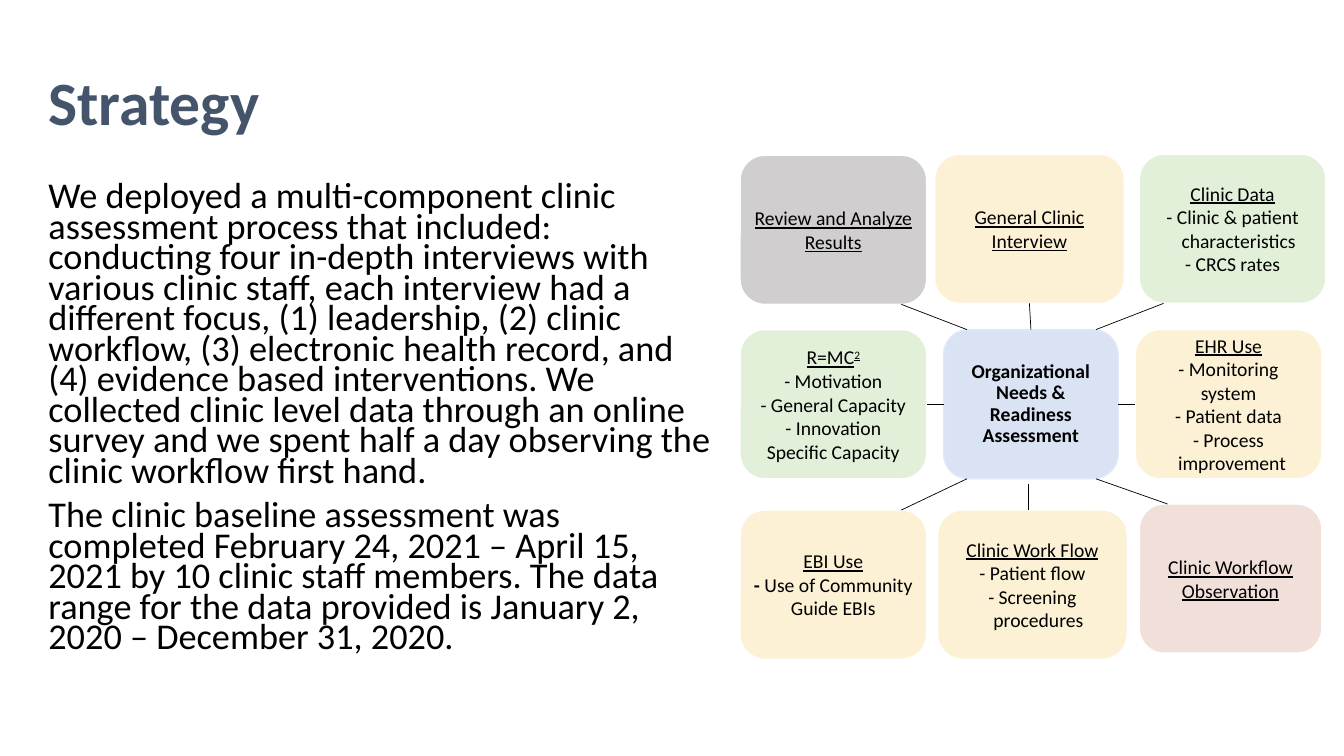
"""Build the Strategy slide with its clinic assessment diagram."""
from lxml.etree import SubElement
from pptx import Presentation
from pptx.dml.color import RGBColor
from pptx.enum.shapes import MSO_CONNECTOR, MSO_SHAPE
from pptx.enum.text import MSO_ANCHOR, MSO_AUTO_SIZE, PP_ALIGN
from pptx.oxml.ns import qn
from pptx.util import Inches, Pt


def color(code):
    return RGBColor.from_string(code)


def write(para, text, code="000000", **extra):
    run = para.add_run()
    run.text = text
    look = {"name": "Calibri", "size": Pt(14), "bold": False, "underline": False}
    for key, value in {**look, **extra}.items():
        setattr(run.font, key, value)
    run.font.color.rgb = color(code)
    return run


deck = Presentation()
deck.slide_width = Inches(13.33)
deck.slide_height = Inches(7.5)
slide = deck.slides.add_slide(deck.slide_layouts[1])
shapes = slide.shapes

title, body = slide.placeholders
places = [
    (title, (0.38, 0.32, 11.5, 1.45), MSO_ANCHOR.MIDDLE),
    (body, (0.38, 1.78, 6.78, 5.01), MSO_ANCHOR.TOP),
]
for holder, place, anchor in places:
    for key, value in zip(("left", "top", "width", "height"), place):
        setattr(holder, key, Inches(value))
    frame = {"word_wrap": True, "auto_size": MSO_AUTO_SIZE.NONE, "vertical_anchor": anchor}
    for key, value in frame.items():
        setattr(holder.text_frame, key, value)

para = title.text_frame.paragraphs[0]
para.alignment = PP_ALIGN.LEFT
para.line_spacing = 0.9
write(para, "Strategy", "44546A", size=Pt(44), bold=True)

story = [
    "We deployed a multi-component clinic assessment process that included: "
    "conducting four in-depth interviews with various clinic staff, each interview "
    "had a different focus, (1) leadership, (2) clinic workflow, (3) electronic "
    "health record, and (4) evidence based interventions. We collected clinic level "
    "data through an online survey and we spent half a day observing the clinic "
    "workflow first hand.",
    "The clinic baseline assessment was completed February 24, 2021 – April 15, 2021 "
    "by 10 clinic staff members. The data range for the data provided is January 2, "
    "2020 – December 31, 2020.",
]
for index, text in enumerate(story):
    para = body.text_frame.add_paragraph() if index else body.text_frame.paragraphs[0]
    for key, value in {"line_spacing": 0.7, "space_before": Pt(10)}.items():
        setattr(para, key, value)
    write(para, text, size=Pt(25.9))
    props = para._p.get_or_add_pPr()
    props.set("marL", "0")
    props.set("indent", "0")
    SubElement(props, qn("a:buNone"))

cream, green = "FCF1D4", "E2F0D9"
cards = [
    ("ehr", 11.26, 3.27, 1.85, cream, "EHR Use",
     [("- Monitoring system", 0), ("- Patient data", 0), ("- Process improvement", 0.07)]),
    ("core", 9.36, 3.27, 1.73, "DAE3F3", "Organizational Needs & Readiness Assessment", []),
    ("talk", 9.27, 1.53, 1.88, cream, "General Clinic Interview", []),
    ("data", 11.3, 1.53, 1.85, green, "Clinic Data",
     [("- Clinic & patient characteristics", 0.12), ("- CRCS rates", 0)]),
    ("watch", 11.3, 5, 1.81, "F1E0DA", "Clinic Workflow Observation", []),
    ("flow", 9.3, 5.06, 1.88, cream, "Clinic Work Flow",
     [("- Patient flow", 0), ("- Screening procedures", 0.12)]),
    ("ebi", 7.34, 5.06, 1.85, cream, "EBI Use", [("- Use of Community Guide EBIs", 0)]),
    ("ready", 7.34, 3.27, 1.85, green, "R=MC",
     [("- Motivation", 0), ("- General Capacity", 0), ("- Innovation Specific Capacity", 0)]),
    ("review", 7.34, 1.54, 1.85, "D0CECE", "Review and Analyze Results", []),
]
boxes = {}
for name, left, top, width, fill, head, items in cards:
    core = name == "core"
    box = shapes.add_shape(MSO_SHAPE.ROUNDED_RECTANGLE, Inches(left), Inches(top),
                           Inches(width), Inches(1.48))
    boxes[name] = box
    box.shadow.inherit = False
    box.fill.solid()
    box.fill.fore_color.rgb = color(fill)
    box.line.color.rgb = color("DEEBF7" if core else "FFFFFF")
    box.line.width = Pt(1)
    frame = box.text_frame
    frame.word_wrap = True
    frame.vertical_anchor = MSO_ANCHOR.MIDDLE
    for side in ("left", "top", "right", "bottom"):
        setattr(frame, f"margin_{side}", Inches(0.06))
    para = frame.paragraphs[0]
    para.alignment = PP_ALIGN.CENTER
    para.line_spacing = 0.9 if core else 1.0
    write(para, head, bold=core, underline=not core)
    if name == "ready":
        power = write(para, "2", underline=True)
        power._r.get_or_add_rPr().set("baseline", "30000")
    for text, hang in items:
        para = frame.add_paragraph()
        para.alignment = PP_ALIGN.CENTER
        props = para._p.get_or_add_pPr()
        props.set("marL", str(Inches(hang)))
        props.set("indent", str(-Inches(hang)))
        if name == "ebi":
            write(para, text[0], bold=True)
            text = text[1:]
        write(para, text)

links = [
    ((9.59, 3.27), (8.94, 3.02), None),
    ((10.87, 3.27), (11.54, 3.01), None),
    ((9.59, 4.75), (8.94, 5.06), None),
    ((10.87, 4.75), (11.58, 5), None),
    ((10.2, 4.8), (10.2, 5.06), None),
    ((10.24, 3.27), (10.24, 3.01), (0, "talk", 2)),
    ((11.1, 4.01), (11.26, 4.01), (3, "ehr", 1)),
    ((9.36, 4.01), (9.19, 4.01), (1, "ready", 3)),
]
for start, end, join in links:
    line = shapes.add_connector(MSO_CONNECTOR.STRAIGHT, *map(Inches, start + end))
    line.line.color.rgb = color("000000")
    line.line.width = Pt(0.5)
    SubElement(line._element.spPr, qn("a:effectLst"))
    if join:
        out, name, into = join
        line.begin_connect(boxes["core"], out)
        line.end_connect(boxes[name], into)

deck.save("out.pptx")
